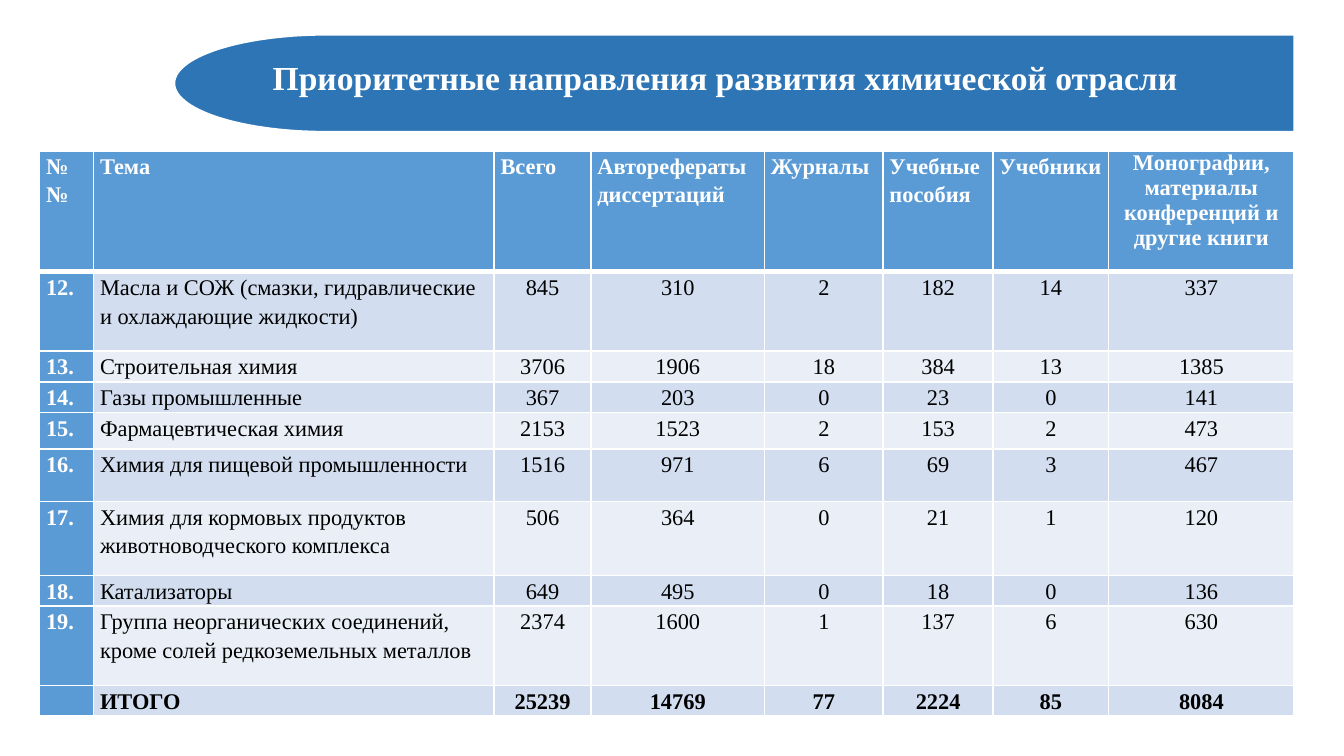
from math import cos, pi, sin

from lxml.etree import SubElement
from pptx import Presentation
from pptx.dml.color import RGBColor
from pptx.enum.text import MSO_ANCHOR, PP_ALIGN
from pptx.oxml.ns import qn
from pptx.util import Cm, Pt

# Content
TITLE = "Приоритетные направления развития химической отрасли"
HEADER = ["№№", "Тема", "Всего", "Авторефераты диссертаций", "Журналы",
          "Учебные пособия", "Учебники",
          "Монографии, материалы конференций и другие книги"]
ROWS = [
    ["12.", "Масла и СОЖ (смазки, гидравлические и охлаждающие жидкости)",
     845, 310, 2, 182, 14, 337],
    ["13.", "Строительная химия", 3706, 1906, 18, 384, 13, 1385],
    ["14.", "Газы промышленные", 367, 203, 0, 23, 0, 141],
    ["15.", "Фармацевтическая химия", 2153, 1523, 2, 153, 2, 473],
    ["16.", "Химия для пищевой промышленности", 1516, 971, 6, 69, 3, 467],
    ["17.", "Химия для кормовых продуктов животноводческого комплекса",
     506, 364, 0, 21, 1, 120],
    ["18.", "Катализаторы", 649, 495, 0, 18, 0, 136],
    ["19.", "Группа неорганических соединений, кроме солей редкоземельных металлов",
     2374, 1600, 1, 137, 6, 630],
    ["", "ИТОГО", 25239, 14769, 77, 2224, 85, 8084],
]
TABLE = [HEADER] + ROWS
LAST_ROW, LAST_COL = len(TABLE) - 1, len(HEADER) - 1

# Sizes in centimetres
COL_WIDTHS = [1.02, 7.57, 1.83, 3.28, 2.24, 2.08, 2.18, 3.51]
ROW_HEIGHTS = [2.29, 1.5, 0.58, 0.58, 0.69, 0.99, 1.4, 0.58, 1.5, 0.58]
BANNER_LEFT, BANNER_TOP, BANNER_RIGHT, BANNER_HEIGHT = 3.3, 0.66, 24.46, 1.83
CAP_WIDTH = 2.87
CAP_STEPS = 60

# Style
FONT = "Times New Roman"
WHITE = RGBColor(0xFF, 0xFF, 0xFF)
BLACK = RGBColor(0x00, 0x00, 0x00)
BANNER_BLUE = RGBColor(0x2E, 0x75, 0xB6)
HEAD_BLUE = RGBColor(0x5B, 0x9B, 0xD5)
BANDS = [RGBColor(0xEA, 0xEF, 0xF7), RGBColor(0xD2, 0xDE, 0xEF)]


def add_text(p, text, size, color, bold):
    r = p.add_run()
    r.text = text
    r.font.name, r.font.size, r.font.bold = FONT, Pt(size), bold
    r.font.color.rgb = color


def add_borders(cell, top, bottom):
    tcPr = cell._tc.get_or_add_tcPr()
    for tag, width in (("lnL", 1), ("lnR", 1), ("lnT", top), ("lnB", bottom)):
        ln = SubElement(tcPr, qn("a:" + tag), w=str(Pt(width)))
        fill = SubElement(ln, qn("a:solidFill"))
        SubElement(fill, qn("a:srgbClr"), val=str(WHITE))


def fill_cell(cell, row, col):
    is_head = row == 0 or col == 0
    add_borders(cell, 3 if row == 1 else 1, 3 if row == 0 else 1)
    cell.fill.solid()
    cell.fill.fore_color.rgb = HEAD_BLUE if is_head else BANDS[row % 2]
    cell.margin_left = cell.margin_right = Cm(0.12)
    cell.margin_top = cell.margin_bottom = 0
    p = cell.text_frame.paragraphs[0]
    wide_head = row == 0 and col == LAST_COL
    if not wide_head:
        p.line_spacing = 1.15
    if wide_head or (row > 0 and col > 1):
        p.alignment = PP_ALIGN.CENTER
    text = str(TABLE[row][col])
    if text:
        add_text(p, text, 12, WHITE if is_head else BLACK,
                 is_head or row == LAST_ROW)
    else:
        # Keeps the empty cell as low as the rest of its row
        SubElement(p._p, qn("a:endParaRPr"), sz="1200")


prs = Presentation()
prs.slide_width, prs.slide_height = Cm(25.4), Cm(14.29)
s = prs.slides.add_slide(prs.slide_layouts[5])

# Title
title = s.shapes.title
title.left, title.top, title.width, title.height = Cm(4.9), Cm(0.94), Cm(19.56), Cm(1.02)
tf = title.text_frame
tf.word_wrap = True
tf.vertical_anchor = MSO_ANCHOR.TOP
p = tf.paragraphs[0]
p.alignment = PP_ALIGN.LEFT
add_text(p, TITLE, 18, WHITE, True)

# Banner with a half-ellipse at its left end, behind the title
cap_x, radius = BANNER_LEFT + CAP_WIDTH, BANNER_HEIGHT / 2
angles = [pi * i / CAP_STEPS for i in range(CAP_STEPS + 1)]
cap = [(cap_x - CAP_WIDTH * sin(a), BANNER_TOP + radius * (1 + cos(a))) for a in angles]
bottom = BANNER_TOP + BANNER_HEIGHT
outline = [(BANNER_RIGHT, bottom)] + cap
builder = s.shapes.build_freeform(Cm(BANNER_RIGHT), Cm(BANNER_TOP))
builder.add_line_segments([(Cm(x), Cm(y)) for x, y in outline], close=True)
banner = builder.convert_to_shape()
banner.shadow.inherit = False
banner.fill.solid()
banner.fill.fore_color.rgb = BANNER_BLUE
banner.line.color.rgb = WHITE
banner.line.width = Pt(0.78)
title.element.addprevious(banner.element)

# Table
table = s.shapes.add_table(len(TABLE), len(HEADER), Cm(0.75), Cm(2.85),
                           Cm(sum(COL_WIDTHS)), Cm(sum(ROW_HEIGHTS))).table
for column, width in zip(table.columns, COL_WIDTHS):
    column.width = Cm(width)
for i, height in enumerate(ROW_HEIGHTS):
    table.rows[i].height = Cm(height)
    for j in range(len(HEADER)):
        fill_cell(table.cell(i, j), i, j)

prs.save("out.pptx")
